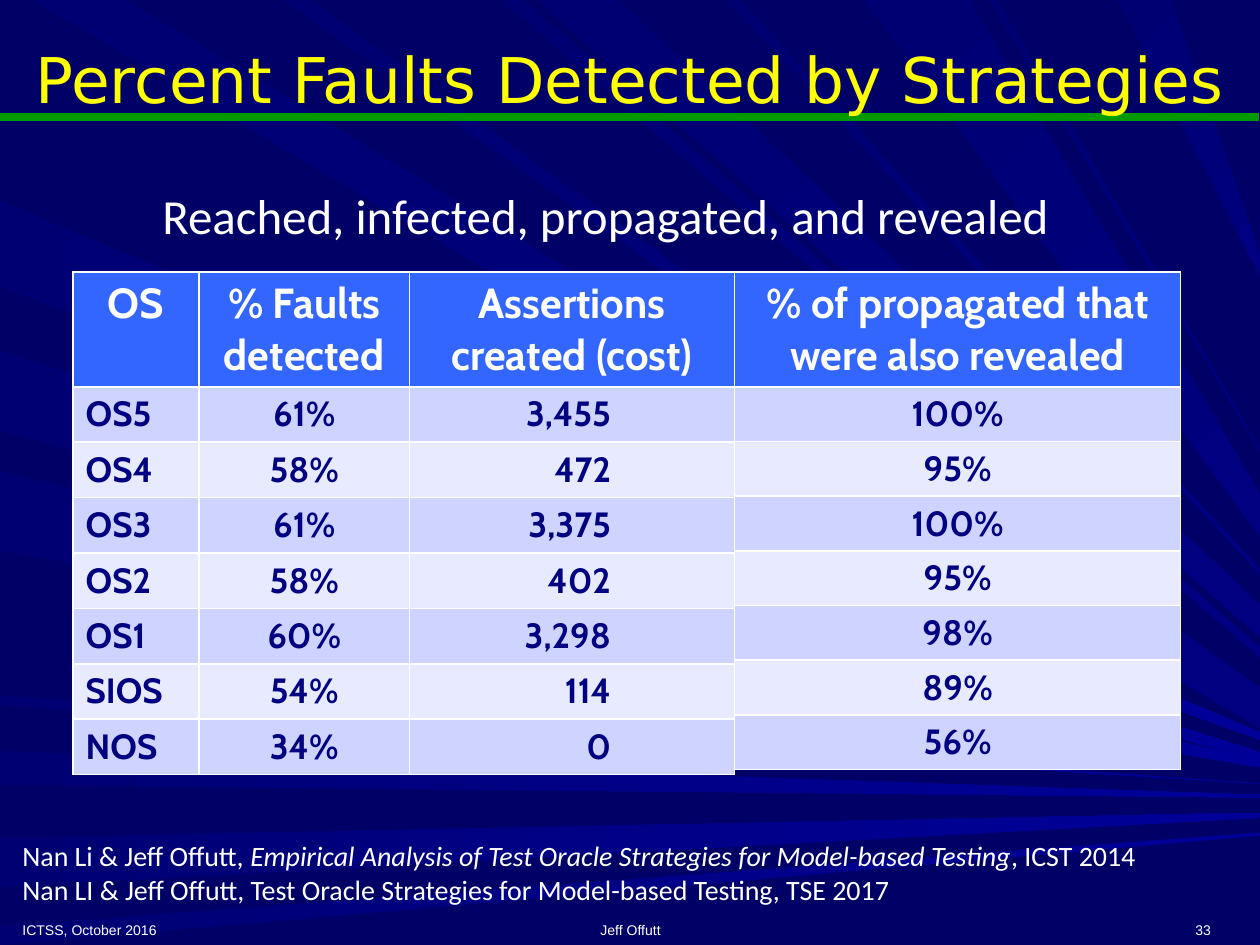
from pptx import Presentation
from pptx import util as u
from pptx.dml.color import RGBColor
from pptx.enum import shapes, text
from pptx.oxml import parse_xml
from pptx.oxml.ns import nsdecls, qn
from lxml import etree

WHITE = RGBColor(0xFF, 0xFF, 0xFF)
YELLOW = RGBColor(0xFF, 0xFF, 0x00)
GREEN = RGBColor(0x00, 0x99, 0x00)
NIGHT = RGBColor(0x00, 0x00, 0x66)
DUSK = RGBColor(0x00, 0x00, 0x73)
NAVY = RGBColor(0x00, 0x00, 0x80)
BRIGHT = RGBColor(0x00, 0x00, 0x99)
HEADER = RGBColor(0x33, 0x66, 0xFF)
BANDS = [RGBColor(0xCE, 0xD3, 0xFF), RGBColor(0xE8, 0xEA, 0xFF)]

# Rays in 1/100 inch: start and end along one edge, then height at the right edge
LEFT_RAYS = [(159, 228, 584), (278, 342, 600), (374, 437, 606),
             (552, 560, 622), (596, 623, 632), (665, 704, 647), (735, 750, 662)]
TOP_RAYS = [(26, 101, 563), (225, 247, 550), (398, 416, 518), (426, 492, 493),
            (577, 588, 454), (686, 770, 409), (785, 792, 357), (887, 930, 210)]

STRATEGIES = [
    ["OS", "% Faults detected", "Assertions created (cost)"],
    ["OS5", "61%", "3,455"],
    ["OS4", "58%", "472"],
    ["OS3", "61%", "3,375"],
    ["OS2", "58%", "402"],
    ["OS1", "60%", "3,298"],
    ["SIOS", "54%", "114"],
    ["NOS", "34%", "0"],
]
REVEALED = [["% of propagated that were also revealed"],
            ["100%"], ["95%"], ["100%"], ["95%"], ["98%"], ["89%"], ["56%"]]

LEFT, CENTER, RIGHT = text.PP_ALIGN.LEFT, text.PP_ALIGN.CENTER, text.PP_ALIGN.RIGHT
FOOTER = dict(name="Arial", size=u.Pt(8))
BODY = dict(name="Calibri", size=u.Pt(16))


def format_font(font, color, **values):
    for key, value in values.items():
        setattr(font, key, value)
    font.color.rgb = color


def add_ray(slide, start, end, tip, from_top):
    """A band that narrows from the top or left edge towards the right edge."""
    half_tip = (end - start) * (0.2 if from_top else 0.05)
    base = [(end, 0), (start, 0)] if from_top else [(0, start), (0, end)]
    corners = base + [(1000, tip + half_tip), (1000, tip - half_tip)]
    builder = slide.shapes.build_freeform(*corners[0], scale=u.Inches(0.01))
    builder.add_line_segments(corners[1:], close=True)
    ray = builder.convert_to_shape()
    ray.shadow.inherit = False
    ray.line.fill.background()
    ray.fill.gradient()
    ray.fill.gradient_angle = 315 if from_top else 0
    for stop, color in zip(ray.fill.gradient_stops, (DUSK, NAVY if from_top else BRIGHT)):
        stop.color.rgb = color


def add_rule(slide, y):
    rule = slide.shapes.add_connector(shapes.MSO_CONNECTOR.STRAIGHT,
                                      0, u.Inches(y), u.Inches(9.99), u.Inches(y))
    rule.line.color.rgb = GREEN
    rule.line.width = u.Pt(4.5)
    etree.SubElement(rule._element.spPr, qn("a:effectLst"))


def add_text(slide, box, paragraphs, font, align=LEFT,
             anchor=text.MSO_ANCHOR.TOP, wrap=True):
    """Each paragraph is a list of (words, italic) runs."""
    frame = slide.shapes.add_textbox(*map(u.Inches, box)).text_frame
    frame.word_wrap = wrap
    frame.vertical_anchor = anchor
    for i, runs in enumerate(paragraphs):
        paragraph = frame.add_paragraph() if i else frame.paragraphs[0]
        paragraph.alignment = align
        for words, italic in runs:
            run = paragraph.add_run()
            run.text = words
            format_font(run.font, WHITE, italic=italic, **font)


def add_borders(cell):
    properties = cell._tc.get_or_add_tcPr()
    for i, side in enumerate(("lnL", "lnR", "lnT", "lnB")):
        properties.insert(i, parse_xml(
            f'<a:{side} {nsdecls("a")} w="{u.Pt(1)}"><a:solidFill>'
            f'<a:srgbClr val="{WHITE}"/></a:solidFill></a:{side}>'))


def add_result_table(slide, left, widths, aligns, row_height, rows):
    header_height = 0.91
    height = header_height + row_height * (len(rows) - 1)
    table = slide.shapes.add_table(len(rows), len(widths), u.Inches(left), u.Inches(2.16),
                                   u.Inches(sum(widths)), u.Inches(height)).table
    for column, width in zip(table.columns, widths):
        column.width = u.Inches(width)
    for r, values in enumerate(rows):
        table.rows[r].height = u.Inches(row_height if r else header_height)
        for c, value in enumerate(values):
            cell = table.cell(r, c)
            cell.text = value
            cell.fill.solid()
            cell.fill.fore_color.rgb = BANDS[(r - 1) % 2] if r else HEADER
            add_borders(cell)
            paragraph = cell.text_frame.paragraphs[0]
            paragraph.alignment = aligns[c] if r else CENTER
            if r and aligns[c] == RIGHT:  # digits line up under the header's middle
                cell.margin_right = u.Inches(0.98)
            format_font(paragraph.runs[0].font, NAVY if r else WHITE, name="Cabin",
                        size=u.Pt(20 if r else 24), bold=True)


def place_title(slide, words):
    title = slide.shapes.title
    slide.shapes._spTree.append(title._element)  # in front of the rays
    for key, inches in dict(left=0.08, top=0, width=9.84, height=1.25).items():
        setattr(title, key, u.Inches(inches))
    title.text_frame.text = words
    title.text_frame.vertical_anchor = text.MSO_ANCHOR.MIDDLE
    paragraph = title.text_frame.paragraphs[0]
    paragraph.alignment = CENTER
    format_font(paragraph.runs[0].font, YELLOW, name="DejaVu Sans", size=u.Pt(36))


def main():
    deck = Presentation()
    deck.slide_width, deck.slide_height = u.Inches(10), u.Inches(7.5)
    slide = deck.slides.add_slide(deck.slide_layouts[5])

    # Backdrop
    slide.background.fill.solid()
    slide.background.fill.fore_color.rgb = NIGHT
    for rays, from_top in ((TOP_RAYS, True), (LEFT_RAYS, False)):
        for ray in rays:
            add_ray(slide, *ray, from_top)
    add_rule(slide, 0.93)

    # Title and footer
    place_title(slide, "Percent Faults Detected by Strategies")
    for left, width, words, align in [(0.08, 2.33, "ICTSS, October 2016", LEFT),
                                      (3.42, 3.17, "Jeff Offutt", CENTER),
                                      (7.58, 2.13, "33", RIGHT)]:
        add_text(slide, (left, 7.17, width, 0.33), [[(words, False)]], FOOTER,
                 align, text.MSO_ANCHOR.BOTTOM)

    # Results
    add_result_table(slide, 0.58, [1, 1.67, 2.58], [LEFT, CENTER, RIGHT], 0.44, STRATEGIES)
    add_text(slide, (1.19, 1.42, 7.65, 0.57),
             [[("Reached, infected, propagated, and revealed", False)]],
             dict(BODY, size=u.Pt(28)), wrap=False)
    add_result_table(slide, 5.83, [3.54], [CENTER], 0.43, REVEALED)

    # Sources
    add_text(slide, (0.08, 6.61, 9.83, 0.64), [
        [("Nan Li & Jeff Offutt, ", False),
         ("Empirical Analysis of Test Oracle Strategies for Model-based Testing", True),
         (", ICST 2014", False)],
        [("Nan LI & Jeff Offutt, Test Oracle Strategies for Model-based Testing, TSE 2017",
          False)]], BODY)
    deck.save("out.pptx")


if __name__ == "__main__":
    main()
